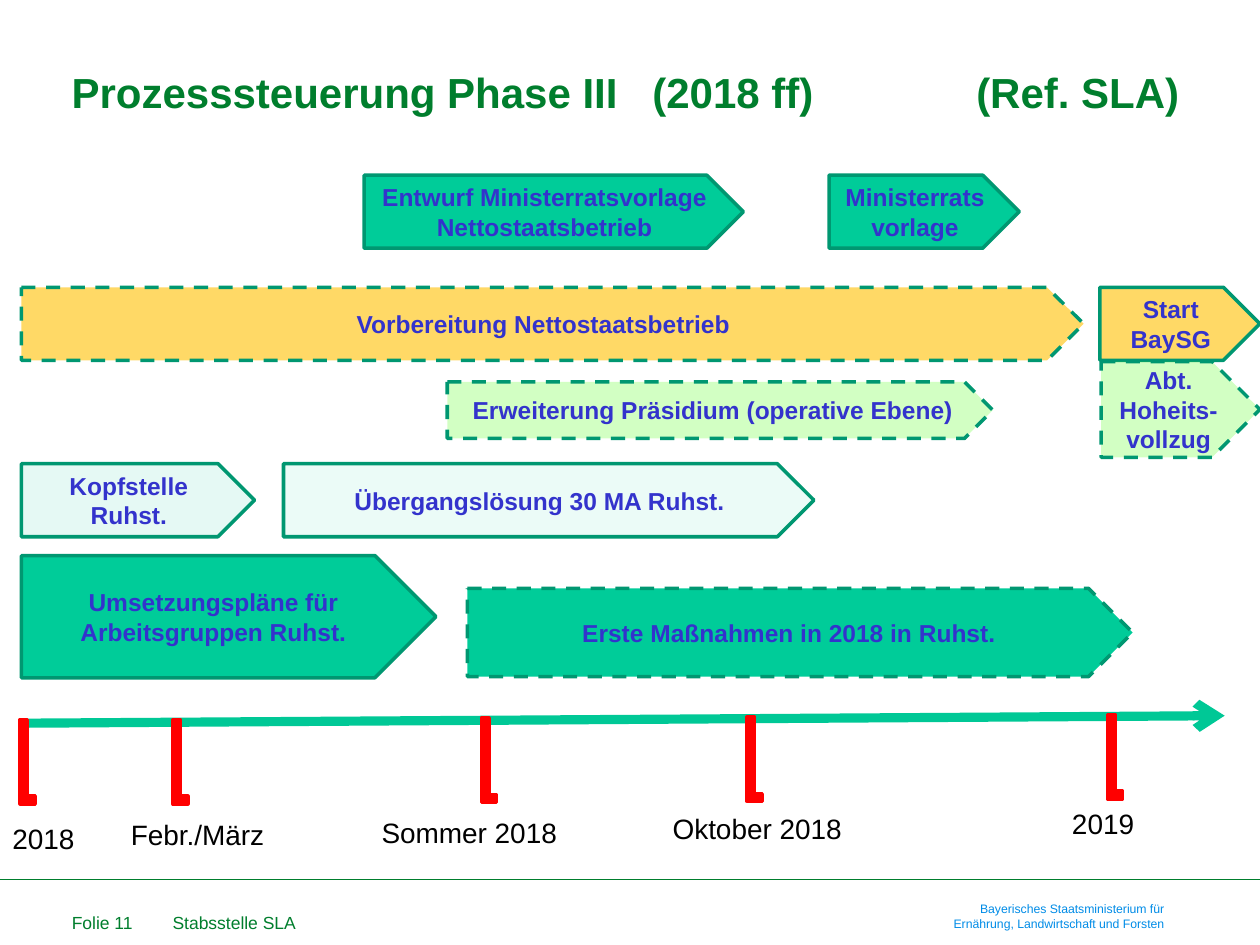
from lxml import etree
from pptx import Presentation
from pptx import util as u
from pptx.dml.color import RGBColor
from pptx.enum import dml, shapes, text
from pptx.oxml.ns import qn

GREEN = RGBColor(0x00, 0x7E, 0x2D)
BLUE = RGBColor(0x00, 0x8C, 0xE7)
INK = RGBColor(0x33, 0x33, 0xCC)
BLACK = RGBColor(0, 0, 0)
EDGE = RGBColor(0x00, 0x97, 0x71)
AXIS = RGBColor(0x00, 0xC8, 0x96)
RED = RGBColor(0xFF, 0, 0)
TEAL = RGBColor(0x00, 0xCC, 0x99)
AMBER = RGBColor(0xFF, 0xC0, 0x00)
LIME = RGBColor(0x66, 0xFF, 0x33)

# Content
WIDTH, HEIGHT = 10, 7.5
TITLE = "Prozesssteuerung Phase III\t(2018 ff)\t(Ref. SLA)"
TITLE_TABS = (4.61, 7.18)
MINISTRY = ["Bayerisches Staatsministerium für", "Ernährung, Landwirtschaft und Forsten"]

# Rows of the plan: top, height
ROWS = {
    "council": (1.39, 0.58),
    "preparation": (2.28, 0.58),
    "authority": (2.87, 0.76),
    "board": (3.03, 0.45),
    "interim": (3.68, 0.58),
    "plans": (4.41, 0.97),
    "measures": (4.67, 0.7),
}
# Phases: row, left, right, text, colour, opacity in %, dashed
PHASES = [
    ("plans", 0.17, 3.46, "Umsetzungspläne für Arbeitsgruppen Ruhst.", TEAL, 100, False),
    ("council", 2.89, 5.9, "Entwurf Ministerratsvorlage Nettostaatsbetrieb", TEAL, 100, False),
    ("measures", 3.71, 8.99, "Erste Maßnahmen in 2018 in Ruhst.", TEAL, 100, True),
    ("council", 6.58, 8.09, "Ministerratsvorlage", TEAL, 100, False),
    ("interim", 0.17, 2.02, "Kopfstelle Ruhst.", TEAL, 10, False),
    ("interim", 2.25, 6.46, "Übergangslösung 30 MA Ruhst.", TEAL, 8, False),
    ("preparation", 0.17, 8.6, "Vorbereitung Nettostaatsbetrieb", AMBER, 60, True),
    ("preparation", 8.73, WIDTH, "Start BaySG", AMBER, 60, False),
    ("board", 3.55, 7.88, "Erweiterung Präsidium (operative Ebene)", LIME, 29, True),
    ("authority", 8.74, WIDTH, "Abt. Hoheits-vollzug", LIME, 29, True),
]
# Time marks: left and top of mark, text, left, top and width of label
MARKS = [
    (0.16, 5.71, "2018", 0, 6.47, 0.8),
    (1.37, 5.71, "Febr./März", 0.94, 6.44, 1.3),
    (3.82, 5.7, "Sommer 2018", 2.93, 6.42, 2),
    (5.93, 5.69, "Oktober 2018", 5.24, 6.39, 1.96),
    (8.79, 5.67, "2019", 8.41, 6.35, 1.16),
]

prs = Presentation()
prs.slide_width, prs.slide_height = u.Inches(WIDTH), u.Inches(HEIGHT)
s = prs.slides.add_slide(prs.slide_layouts[6])


def inches(*values):
    return [u.Inches(v) for v in values]


def add_run(p, words, size, color, bold=False):
    r = p.add_run()
    r.text = words
    r.font.name, r.font.size, r.font.bold = "Arial", u.Pt(size), bold
    r.font.color.rgb = color


def add_label(box, lines, size, color, bold=False, insets=(0.1, 0.05, 0.1, 0.05), wrap=True):
    tf = s.shapes.add_textbox(*inches(*box)).text_frame
    tf.word_wrap = wrap
    tf.margin_left, tf.margin_top, tf.margin_right, tf.margin_bottom = inches(*insets)
    for i, line in enumerate(lines):
        p = tf.add_paragraph() if i else tf.paragraphs[0]
        add_run(p, line, size, color, bold)
    return tf


def add_line(start, end, color, width):
    line = s.shapes.add_connector(shapes.MSO_CONNECTOR.STRAIGHT, *inches(*start, *end))
    line.line.color.rgb, line.line.width = color, u.Pt(width)
    etree.SubElement(line._element.spPr, qn("a:effectLst"))
    return line


def add_block(kind, box, fill, edge, opacity=100):
    sp = s.shapes.add_shape(kind, *inches(*box))
    sp.shadow.inherit = False
    sp.fill.solid()
    sp.fill.fore_color.rgb = fill
    sp.line.color.rgb, sp.line.width = edge, u.Pt(2)
    if opacity < 100:
        color = sp._element.spPr.find(qn("a:solidFill"))[0]
        etree.SubElement(color, qn("a:alpha"), val=str(opacity * 1000))
    return sp


# Footer
add_line((0, 6.98), (WIDTH, 6.98), GREEN, 0.75)
footer_insets = (0, 0.05, 0.1, 0.05)
add_label((0.57, 7.19, 0.76, 0.27), ["Folie 11"], 10, GREEN, insets=footer_insets)
add_label((1.37, 7.19, 6.15, 0.27), ["Stabsstelle SLA"], 10, GREEN, insets=footer_insets)
ministry = add_label((7.54, 7.14, 1.7, 0.25), MINISTRY, 7, BLUE, insets=(0, 0, 0, 0), wrap=False)
for p in ministry.paragraphs:
    p.alignment, p.line_spacing = text.PP_ALIGN.RIGHT, u.Pt(9)

# Title, its parts set on tab stops
title = add_label((0.47, 0.48, 9.04, 0.5), [TITLE], 24, GREEN, bold=True)
title.vertical_anchor = text.MSO_ANCHOR.BOTTOM
tabs = etree.SubElement(title.paragraphs[0]._p.get_or_add_pPr(), qn("a:tabLst"))
for stop in TITLE_TABS:
    etree.SubElement(tabs, qn("a:tab"), pos=str(u.Inches(stop)), algn="l")

# Time axis
axis = add_line((0.17, 5.74), (9.72, 5.68), AXIS, 5.25)
etree.SubElement(axis._element.spPr.find(qn("a:ln")), qn("a:tailEnd"), type="arrow")

# Phases
for row, left, right, words, fill, opacity, dashed in PHASES:
    top, height = ROWS[row]
    sp = add_block(shapes.MSO_SHAPE.PENTAGON, (left, top, right - left, height), fill, EDGE, opacity)
    if dashed:
        sp.line.dash_style = dml.MSO_LINE.DASH
    tf = sp.text_frame
    tf.word_wrap, tf.vertical_anchor = True, text.MSO_ANCHOR.MIDDLE
    p = tf.paragraphs[0]
    p.alignment = text.PP_ALIGN.CENTER
    add_run(p, words, 14, INK, bold=True)

# Time marks
for left, top, words, label_left, label_top, label_width in MARKS:
    add_block(shapes.MSO_SHAPE.CORNER, (left, top, 0.12, 0.67), RED, RED)
    add_label((label_left, label_top, label_width, 0.37), [words], 16, BLACK)

prs.save("out.pptx")
